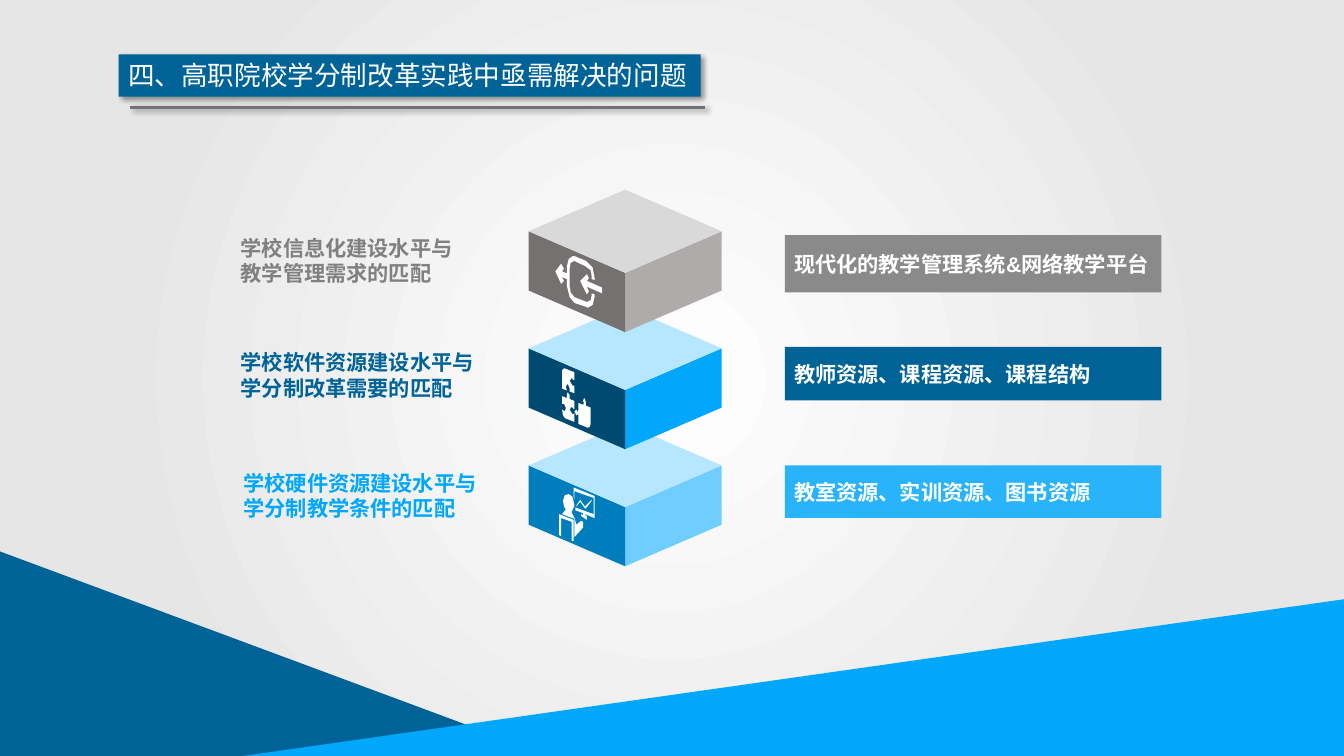
from lxml import etree
from pptx import Presentation
from pptx.dml.color import RGBColor
from pptx.enum.shapes import MSO_CONNECTOR, MSO_SHAPE
from pptx.enum.text import MSO_ANCHOR, MSO_AUTO_SIZE, PP_ALIGN
from pptx.oxml.ns import qn
from pptx.util import Inches, Pt

STRAIGHT, RECTANGLE = MSO_CONNECTOR.STRAIGHT, MSO_SHAPE.RECTANGLE
TOP, MIDDLE, LEFT = MSO_ANCHOR.TOP, MSO_ANCHOR.MIDDLE, PP_ALIGN.LEFT
GROW, FIXED = MSO_AUTO_SIZE.SHAPE_TO_FIT_TEXT, MSO_AUTO_SIZE.NONE

WHITE = RGBColor(0xFF, 0xFF, 0xFF)
EDGE_GRAY = RGBColor(0xE6, 0xE6, 0xE6)
NAVY = RGBColor(0x00, 0x63, 0x97)
DEEP_NAVY = RGBColor(0x00, 0x4A, 0x71)
AZURE = RGBColor(0x00, 0xA7, 0xFB)
BAR_AZURE = RGBColor(0x28, 0xB3, 0xFA)
MID_BLUE = RGBColor(0x00, 0x7D, 0xBC)
SKY = RGBColor(0x6F, 0xCE, 0xFF)
PALE_SKY = RGBColor(0xB7, 0xE6, 0xFF)
DARK_GRAY = RGBColor(0x76, 0x71, 0x71)
LABEL_GRAY = RGBColor(0x80, 0x80, 0x80)
BAR_GRAY = RGBColor(0x8A, 0x8A, 0x8A)
SIDE_GRAY = RGBColor(0xAF, 0xAB, 0xAB)
LID_GRAY = RGBColor(0xD9, 0xD9, 0xD9)

# Content
FONT = "Arial"
TITLE = "四、高职院校学分制改革实践中亟需解决的问题"

# Icon outlines: hundredths of an inch from the left corner of the cube's lid
ENTRY_ICON = [
    [(61, 45), (54, 52), (61, 66), (63, 63), (61, 58), (77, 65), (77, 59), (61, 52),
     (63, 49)],
    [(46, 26), (42, 29), (40, 37), (40, 44), (35, 42), (37, 39), (34, 34), (28, 42),
     (34, 55), (37, 52), (35, 48), (40, 50), (40, 57), (43, 69), (48, 75), (60, 79),
     (62, 80), (67, 77), (69, 69), (69, 66), (66, 65), (66, 67), (65, 72), (61, 74),
     (48, 69), (44, 64), (43, 58), (43, 38), (44, 33), (48, 31), (60, 37), (65, 41),
     (66, 47), (66, 50), (69, 51), (69, 49), (67, 38), (60, 31), (48, 26)],
]
PUZZLE_ICON = [
    [(58, 52), (57, 55), (58, 57), (57, 59), (52, 57), (52, 65), (51, 66), (50, 64),
     (48, 66), (50, 70), (52, 69), (52, 79), (62, 83), (64, 82), (65, 79), (65, 62),
     (60, 60), (60, 57), (59, 53)],
    [(41, 46), (40, 48), (40, 52), (35, 50), (35, 58), (37, 58), (39, 62), (38, 66),
     (35, 64), (36, 70), (38, 73), (48, 77), (48, 68), (46, 69), (43, 64), (45, 61),
     (47, 63), (48, 64), (48, 55), (43, 53), (43, 49)],
    [(37, 21), (35, 23), (35, 42), (40, 44), (39, 40), (41, 37), (43, 42), (43, 45),
     (48, 47), (48, 39), (46, 39), (43, 34), (45, 31), (47, 33), (48, 33), (48, 25),
     (38, 21)],
]
TRAINING_ICON = [
    [(66, 36), (59, 43), (54, 36), (50, 42), (50, 43), (54, 38), (59, 45), (60, 45),
     (66, 37)],
    [(42, 30), (38, 31), (36, 37), (37, 43), (39, 46), (35, 51), (48, 56), (48, 75),
     (57, 65), (57, 59), (55, 58), (50, 62), (48, 55), (45, 49), (48, 42), (46, 33)],
    [(47, 57), (32, 51), (32, 73), (34, 74), (34, 55), (45, 59), (45, 79), (47, 79)],
    [(69, 32), (47, 23), (47, 32), (48, 36), (48, 27), (68, 34), (68, 51), (49, 44),
     (49, 47), (57, 50), (57, 52), (55, 51), (55, 53), (61, 57), (61, 53), (59, 52),
     (59, 51), (69, 55)],
]

# Top to bottom; boxes are (left, top, width, height) or (top, height) in inches
LEVELS = [
    dict(need="学校信息化建设水平与教学管理需求的匹配", need_box=(2.42, 2.41, 2.63, 0.64),
         need_color=LABEL_GRAY, means="现代化的教学管理系统&网络教学平台",
         bar=(2.46, 0.6), bar_color=BAR_GRAY,
         lid=LID_GRAY, front=DARK_GRAY, side=SIDE_GRAY, icon=ENTRY_ICON),
    dict(need="学校软件资源建设水平与学分制改革需要的匹配", need_box=(2.42, 3.61, 2.81, 0.64),
         need_color=NAVY, means="教师资源、课程资源、课程结构",
         bar=(3.63, 0.56), bar_color=NAVY,
         lid=PALE_SKY, front=DEEP_NAVY, side=AZURE, icon=PUZZLE_ICON),
    dict(need="学校硬件资源建设水平与学分制教学条件的匹配", need_box=(2.45, 4.87, 2.85, 0.64),
         need_color=AZURE, means="教室资源、实训资源、图书资源",
         bar=(4.87, 0.55), bar_color=BAR_AZURE,
         lid=PALE_SKY, front=MID_BLUE, side=SKY, icon=TRAINING_ICON),
]

# Layout in inches
WIDTH, HEIGHT = 14.06, 7.91
CUBE_LEFT, CUBE_TOP, CUBE_PITCH = 5.53, 2.42, 1.225
HALF, RISE, DEPTH = 1.01, 0.435, 0.62
BAR_LEFT, BAR_WIDTH = 8.21, 3.94

prs = Presentation()
prs.slide_width, prs.slide_height = Inches(WIDTH), Inches(HEIGHT)
slide = prs.slides.add_slide(prs.slide_layouts[5])
shapes = slide.shapes


def add_effects(shape, shadow):
    effects = etree.SubElement(shape._element.spPr, qn("a:effectLst"))
    if shadow:
        outer = etree.SubElement(effects, qn("a:outerShdw"), blurRad=str(Pt(4)),
                                 dist=str(Pt(3)), dir="2700000", algn="tl", rotWithShape="0")
        black = etree.SubElement(outer, qn("a:srgbClr"), val="000000")
        etree.SubElement(black, qn("a:alpha"), val="40000")


def paint(shape, color):
    shape.fill.solid()
    shape.fill.fore_color.rgb = color
    shape.line.fill.background()


def outline(contours, color, left=0, top=0):
    """Draw closed contours, given in inches from (left, top), as one shape."""
    placed = [[(Inches(left + x), Inches(top + y)) for x, y in contour]
              for contour in contours]
    builder = shapes.build_freeform(*placed[0][0])
    for index, contour in enumerate(placed):
        if index:
            builder.move_to(*contour[0])
        builder.add_line_segments(contour[1:], close=True)
    shape = builder.convert_to_shape()
    paint(shape, color)
    shape.shadow.inherit = False


def write(shape, text, size, color, bold, anchor, wrap):
    frame = shape.text_frame
    frame.text = text
    frame.word_wrap = wrap
    frame.vertical_anchor = anchor
    paragraph = frame.paragraphs[0]
    paragraph.alignment = LEFT
    font = paragraph.font
    font.name, font.size, font.bold = FONT, Pt(size), bold
    font.color.rgb = color


# Background: radial gradient from the centre
background = slide.background.fill
background.gradient()
for stop, color, position in zip(background.gradient_stops, (WHITE, EDGE_GRAY), (0, 0.73)):
    stop.color.rgb, stop.position = color, position
gradient = slide._element.find(".//" + qn("a:gradFill"))
gradient.remove(gradient.find(qn("a:lin")))
circle = etree.SubElement(gradient, qn("a:path"), path="circle")
etree.SubElement(circle, qn("a:fillToRect"), l="50000", t="50000", r="50000", b="50000")

# Title bar and its rule
title = shapes.title
title.left, title.top, title.width, title.height = map(Inches, (1.24, 0.57, 6.09, 0.44))
paint(title, NAVY)
add_effects(title, shadow=True)
write(title, TITLE, 20, WHITE, False, TOP, False)
title.text_frame.auto_size = FIXED

rule = shapes.add_connector(STRAIGHT, *map(Inches, (1.36, 1.12, 7.38, 1.12)))
rule.line.color.rgb, rule.line.width = DARK_GRAY, Pt(2.25)
add_effects(rule, shadow=True)

# Corner wedges
outline([[(0, 5.77), (5.76, HEIGHT), (0, HEIGHT)]], NAVY)
outline([[(WIDTH, 6.27), (WIDTH, HEIGHT), (2.54, HEIGHT)]], AZURE)

# Stacked cubes, lowest first
for row, level in reversed(list(enumerate(LEVELS))):
    corner = CUBE_LEFT, CUBE_TOP + row * CUBE_PITCH
    near, near_foot = (HALF, RISE), (HALF, RISE + DEPTH)
    right = (2 * HALF, 0)
    outline([[right, near, near_foot, (2 * HALF, DEPTH)]], level["side"], *corner)
    outline([[(0, 0), near, near_foot, (0, DEPTH)]], level["front"], *corner)
    outline([[(HALF, -RISE), (0, 0), near, right]], level["lid"], *corner)
    icon = [[(x / 100, y / 100) for x, y in contour] for contour in level["icon"]]
    outline(icon, WHITE, *corner)

# Needs on the left, means on the right
for level in LEVELS:
    need = shapes.add_textbox(*map(Inches, level["need_box"]))
    write(need, level["need"], 16, level["need_color"], True, TOP, True)
    need.text_frame.auto_size = GROW

    bar_top, bar_height = level["bar"]
    bar = shapes.add_shape(RECTANGLE, *map(Inches, (BAR_LEFT, bar_top, BAR_WIDTH, bar_height)))
    paint(bar, level["bar_color"])
    bar.shadow.inherit = False
    write(bar, level["means"], 16, WHITE, True, MIDDLE, False)

prs.save("out.pptx")
